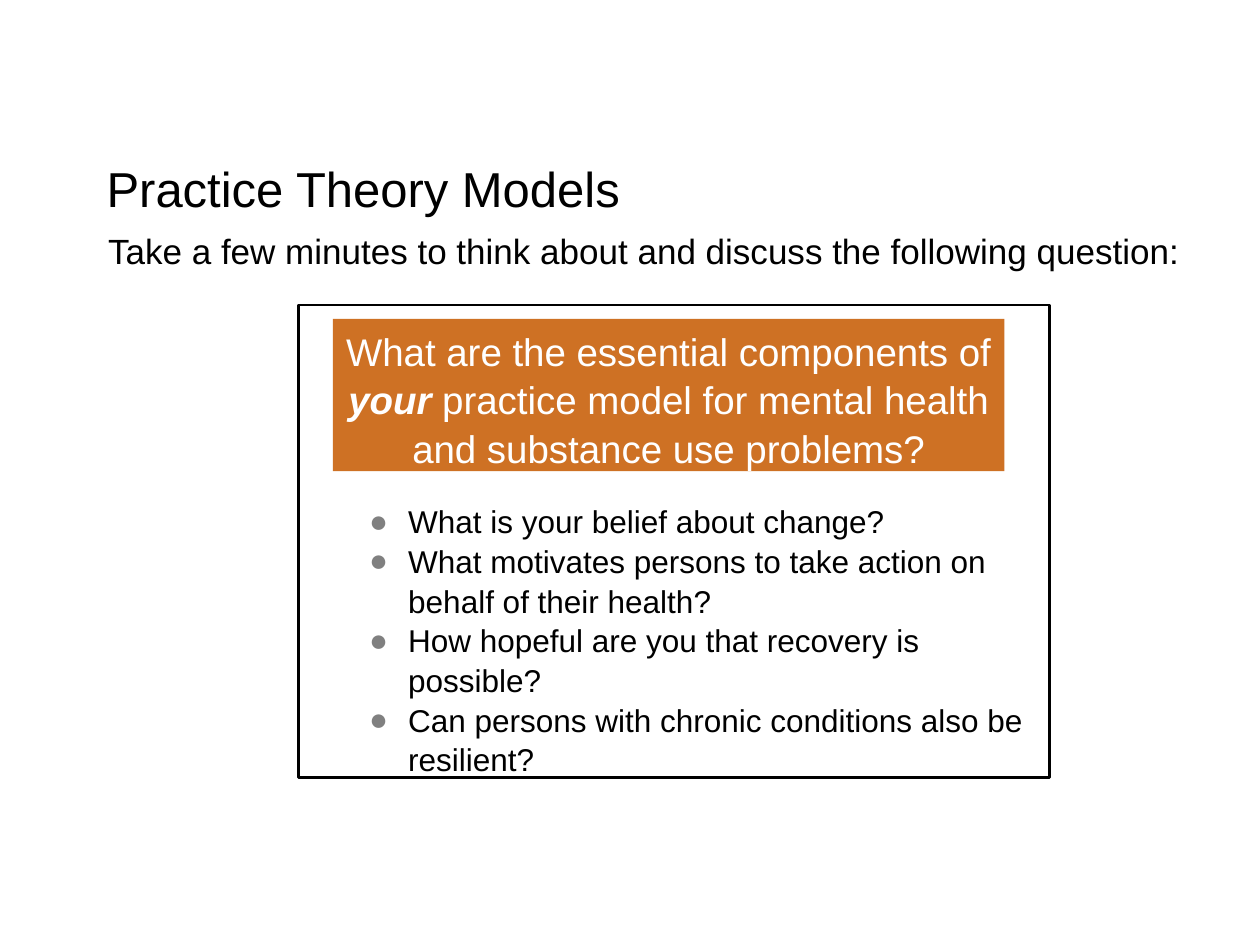
import pptx
import pptx.util
import pptx.dml.color
import pptx.enum.shapes
import pptx.enum.text
import pptx.oxml
import pptx.oxml.ns

Cm = pptx.util.Cm
Align = pptx.enum.text.PP_ALIGN


def tint(code):
    return pptx.dml.color.RGBColor.from_string(code)


class Page:
    font = "Arial"
    pitch = 1.05
    ink = "000000"
    dot = "808080"

    def __init__(self, slide):
        self.slide = slide

    def style(self, run, size, hue, **extra):
        look = {"name": self.font, "size": pptx.util.Pt(size), **extra}
        for key, value in look.items():
            setattr(run.font, key, value)
        run.font.color.rgb = tint(hue)

    def label(self, shape, paras, size, hue, align=Align.LEFT, bullet=False, top=0.13):
        frame = shape.text_frame
        look = {
            "word_wrap": True,
            "vertical_anchor": pptx.enum.text.MSO_ANCHOR.TOP,
            "margin_top": Cm(top),
        }
        for key, value in look.items():
            setattr(frame, key, value)
        for i, runs in enumerate(paras):
            para = frame.add_paragraph() if i else frame.paragraphs[0]
            para.alignment = align
            para.line_spacing = self.pitch
            if bullet:
                self.mark(para)
            for text, extra in runs:
                run = para.add_run()
                run.text = text
                self.style(run, size, hue, **extra)

    def mark(self, para):
        para.level = 1
        props = para._p.get_or_add_pPr()
        props.set("marL", str(Cm(2.06)))
        props.set("indent", str(Cm(-0.79)))
        space = pptx.oxml.ns.nsdecls("a")
        for part in (
            f'<a:buClr {space}><a:srgbClr val="{self.dot}"/></a:buClr>',
            f'<a:buFont {space} typeface="{self.font}"/>',
            f'<a:buChar {space} char="●"/>',
        ):
            props.append(pptx.oxml.parse_xml(part))

    def text(self, box, paras, size, **extra):
        shape = self.slide.shapes.add_textbox(*map(Cm, box))
        self.label(shape, paras, size, self.ink, **extra)

    def rect(self, box, fill=None, line=None):
        kind = pptx.enum.shapes.MSO_SHAPE.RECTANGLE
        shape = self.slide.shapes.add_shape(kind, *map(Cm, box))
        shape.shadow.inherit = False
        if fill:
            shape.fill.solid()
            shape.fill.fore_color.rgb = tint(fill)
        else:
            shape.fill.background()
        if line:
            shape.line.color.rgb = tint(line)
            shape.line.width = pptx.util.Pt(1.5)
        else:
            shape.line.fill.background()
        return shape


def main():
    deck = pptx.Presentation()
    deck.slide_width, deck.slide_height = Cm(25.4), Cm(19.05)
    page = Page(deck.slides.add_slide(deck.slide_layouts[6]))

    page.text((1.9, 2.97, 22.23, 2.34), [[("Practice Theory Models", {})]], 28, top=0.17)
    intro = "Take a few minutes to think about and discuss the following question:"
    page.text((1.93, 4.45, 23.29, 1.12), [[(intro, {})]], 20)

    banner = page.rect((6.71, 6.43, 13.54, 3.07), fill="CE7124")
    query = [
        ("What are the essential components of ", {}),
        ("your", {"bold": True, "italic": True}),
        (" practice model for mental health and substance use problems?", {}),
    ]
    page.label(banner, [query], 22, "FFFFFF", align=Align.CENTER)

    prompts = [
        "What is your belief about change?",
        "What motivates persons to take action on behalf of their health?",
        "How hopeful are you that recovery is possible?",
        "Can persons with chronic conditions also be resilient?",
    ]
    page.text((5.92, 9.96, 15.04, 5.28), [[(item, {})] for item in prompts], 18, bullet=True)
    page.rect((6.02, 6.15, 15.14, 9.53), line=page.ink)

    deck.save("out.pptx")


if __name__ == "__main__":
    main()
